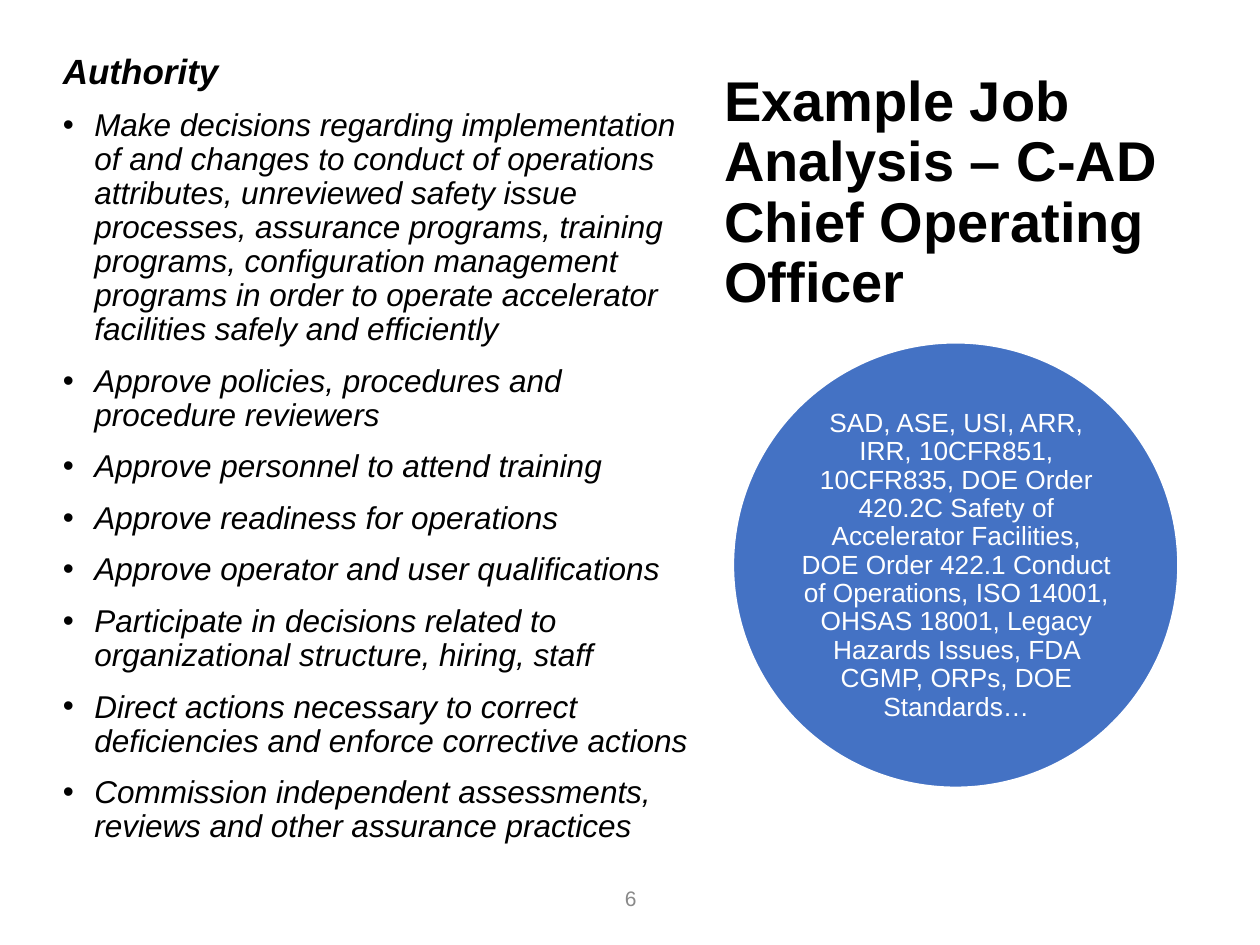
from pptx import Presentation
from pptx.dml.color import RGBColor as RGB
from pptx.enum.shapes import MSO_SHAPE as SHAPE
from pptx.enum.text import MSO_ANCHOR as ANCHOR, PP_ALIGN as ALIGN
from pptx.oxml.ns import qn
from pptx.util import Inches, Pt
from lxml import etree

COLORS = {"text": "000000", "circle": "4472C4", "white": "FFFFFF", "muted": "898989"}
FONT = "Arial"
COLS, ROWS = 100, 75
BULLET_INDENT = Inches(0.25)

TITLE = "Example Job Analysis – C-AD Chief Operating Officer"
HEADING = "Authority"
DUTIES = [
    "Make decisions regarding implementation of and changes to conduct of operations "
    "attributes, unreviewed safety issue processes, assurance programs, training programs, "
    "configuration management programs in order to operate accelerator facilities safely "
    "and efficiently",
    "Approve policies, procedures and procedure reviewers",
    "Approve personnel to attend training",
    "Approve readiness for operations",
    "Approve operator and user qualifications",
    "Participate in decisions related to organizational structure, hiring, staff",
    "Direct actions necessary to correct deficiencies and enforce corrective actions",
    "Commission independent assessments, reviews and other assurance practices",
]
STANDARDS = (
    "SAD, ASE, USI, ARR, IRR, 10CFR851, 10CFR835, DOE Order 420.2C Safety of "
    "Accelerator Facilities, DOE Order 422.1 Conduct of Operations, ISO 14001, "
    "OHSAS 18001, Legacy Hazards Issues, FDA CGMP, ORPs, DOE Standards…"
)


class Deck:
    """Holds the style and the current slide; boxes are (col, row, cols, rows)."""

    def __init__(self, prs):
        self.cell_w = prs.slide_width / COLS
        self.cell_h = prs.slide_height / ROWS
        self.s = prs.slides.add_slide(prs.slide_layouts[6])

    def place(self, box):
        x, y, w, h = box
        return [int(v) for v in (x * self.cell_w, y * self.cell_h,
                                 w * self.cell_w, h * self.cell_h)]

    def text_box(self, box, anchor=ANCHOR.TOP, inset=None):
        tf = self.s.shapes.add_textbox(*self.place(box)).text_frame
        tf.word_wrap = True
        tf.vertical_anchor = anchor
        if inset is not None:
            for side in ("left", "top", "right", "bottom"):
                setattr(tf, f"margin_{side}", Inches(inset))
        return tf

    def paragraph(self, tf, text, size, color="text", bullet=False, para=None, **font):
        first = not tf.paragraphs[0].runs
        p = tf.paragraphs[0] if first else tf.add_paragraph()
        layout = {"line_spacing": 0.9, "space_before": Pt(0 if first else 10)}
        for name, value in {**layout, **(para or {})}.items():
            setattr(p, name, value)
        if bullet:
            pPr = p._p.get_or_add_pPr()
            pPr.set("marL", str(BULLET_INDENT))
            pPr.set("indent", str(-BULLET_INDENT))
            etree.SubElement(pPr, qn("a:buFont")).set("typeface", FONT)
            etree.SubElement(pPr, qn("a:buChar")).set("char", "•")
        r = p.add_run()
        r.text = text
        for name, value in {"name": FONT, "size": Pt(size), **font}.items():
            setattr(r.font, name, value)
        r.font.color.rgb = RGB.from_string(COLORS[color])

    def circle(self, box, fill, line):
        sp = self.s.shapes.add_shape(SHAPE.OVAL, *self.place(box))
        sp.shadow.inherit = False
        sp.fill.solid()
        sp.fill.fore_color.rgb = RGB.from_string(COLORS[fill])
        sp.line.color.rgb = RGB.from_string(COLORS[line])
        sp.line.width = Pt(1)


def main():
    prs = Presentation()
    prs.slide_width, prs.slide_height = Inches(10), Inches(7.5)
    deck = Deck(prs)
    centered = {"alignment": ALIGN.CENTER}

    # Title
    tf = deck.text_box((56.5, 9.9, 38.7, 15.6), ANCHOR.BOTTOM)
    deck.paragraph(tf, TITLE, 32, bold=True)

    # Authority and its duties
    tf = deck.text_box((4, 3.8, 52.5, 53.3))
    deck.paragraph(tf, HEADING, 20, bold=True, italic=True)
    for duty in DUTIES:
        deck.paragraph(tf, duty, 18, bullet=True, italic=True)

    # Circle of standards
    deck.circle((58.2, 27.2, 35.3, 35.3), "circle", "white")
    tf = deck.text_box((63.4, 32.4, 25, 25), ANCHOR.MIDDLE, inset=0.02)
    deck.paragraph(tf, STANDARDS, 15, "white", para=centered)

    # Slide number
    tf = deck.text_box((38.8, 69.3, 22.5, 4), ANCHOR.MIDDLE)
    deck.paragraph(tf, "6", 12, "muted", para={**centered, "line_spacing": 1.0})

    prs.save("out.pptx")


if __name__ == "__main__":
    main()
